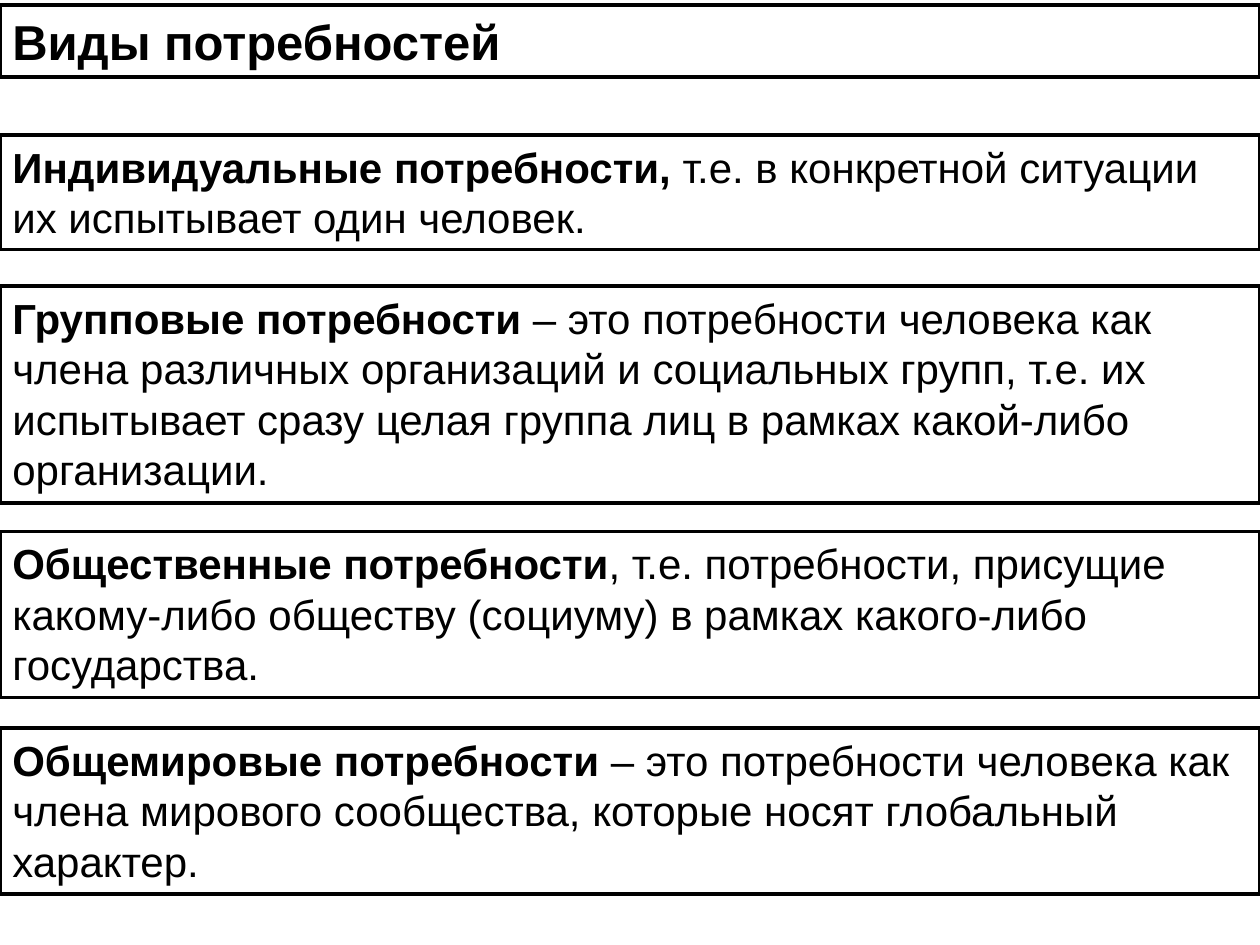
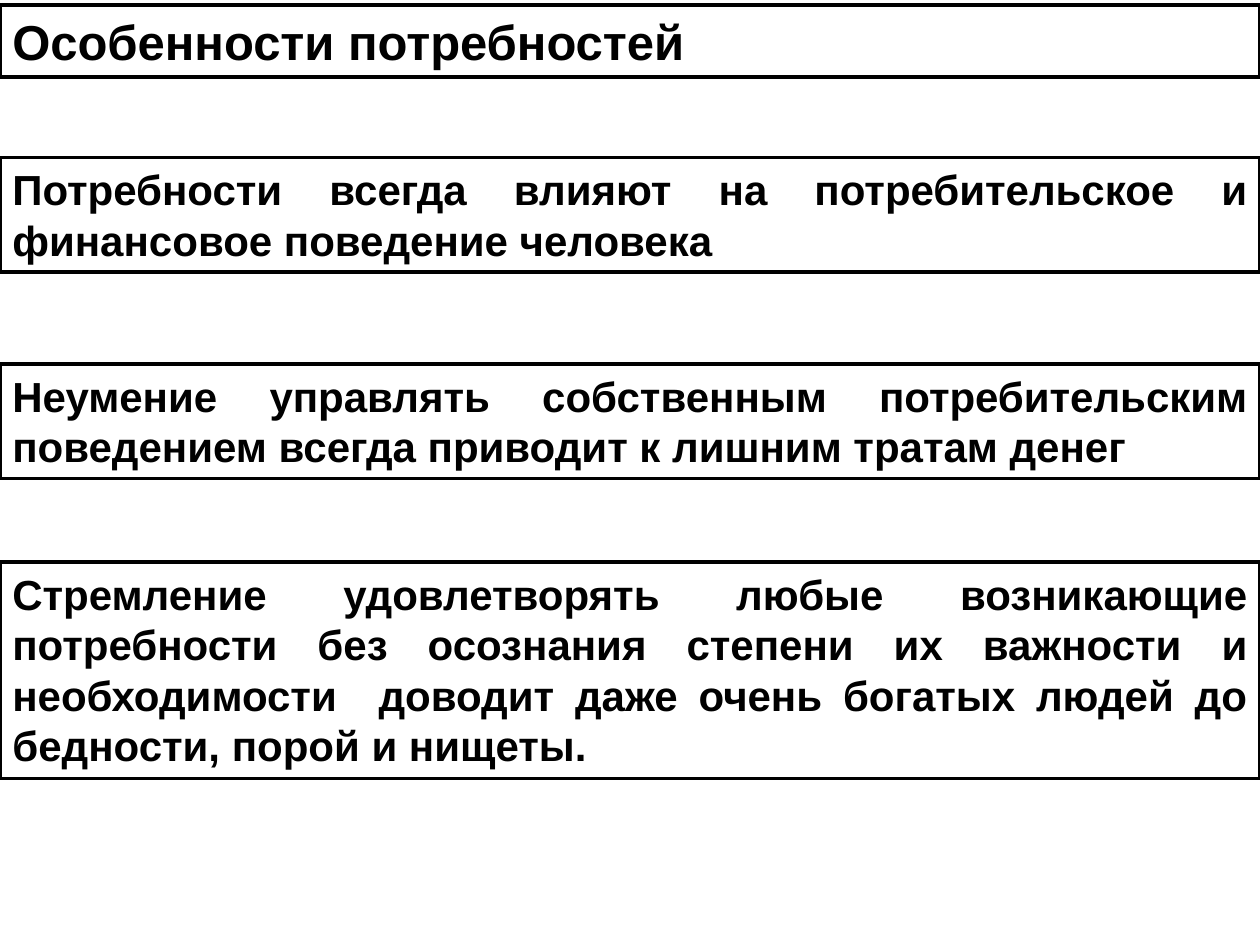
from dataclasses import dataclass

from pptx import Presentation
from pptx.dml.color import RGBColor
from pptx.enum.shapes import MSO_SHAPE
from pptx.enum.text import MSO_ANCHOR, MSO_AUTO_SIZE, PP_ALIGN
from pptx.presentation import Presentation as Prs
from pptx.slide import Slide
from pptx.util import Cm, Pt

COLORS = {"paper": "FFFFFF", "ink": "000000"}
WIDTH, HEIGHT = 25.4, 19.05
TITLE_TOP, TITLE_HEIGHT = 0.1, 1.45
LINE_HEIGHT, PADDING = 1.03, 0.25
FRAME_FORMAT = {
    "word_wrap": True,
    "auto_size": MSO_AUTO_SIZE.SHAPE_TO_FIT_TEXT,
    "vertical_anchor": MSO_ANCHOR.TOP,
}


@dataclass(frozen=True)
class Statement:
    top: float
    lines: int
    term: str
    explanation: str = ""

    @property
    def height(self) -> float:
        return self.lines * LINE_HEIGHT + PADDING


@dataclass(frozen=True)
class Topic:
    title: str
    align: PP_ALIGN
    statements: tuple[Statement, ...]


TOPICS = (
    Topic("Виды потребностей", PP_ALIGN.LEFT, (
        Statement(2.72, 2, "Индивидуальные потребности,",
                  " т.е. в конкретной ситуации их испытывает один человек."),
        Statement(5.77, 4, "Групповые потребности ",
                  "– это потребности человека как члена различных организаций "
                  "и социальных групп, т.е. их испытывает сразу целая группа лиц "
                  "в рамках какой-либо организации."),
        Statement(10.72, 3, "Общественные потребности",
                  ", т.е. потребности, присущие какому-либо обществу (социуму) "
                  "в рамках какого-либо государства."),
        Statement(14.68, 3, "Общемировые потребности ",
                  "– это потребности человека как члена мирового сообщества, "
                  "которые носят глобальный характер."),
    )),
    Topic("Особенности потребностей", PP_ALIGN.JUSTIFY, (
        Statement(3.18, 2, "Потребности всегда влияют на потребительское "
                           "и финансовое поведение человека"),
        Statement(7.34, 2, "Неумение управлять собственным потребительским "
                           "поведением всегда приводит к лишним тратам денег"),
        Statement(11.33, 4, "Стремление удовлетворять любые возникающие потребности "
                            "без осознания степени их важности и необходимости  доводит "
                            "даже очень богатых людей до бедности, порой и нищеты."),
    )),
)


def color(name: str) -> RGBColor:
    return RGBColor.from_string(COLORS[name])


def add_box(s: Slide, top: float, height: float, term: str,
            explanation: str = "", size: int = 24,
            align: PP_ALIGN = PP_ALIGN.LEFT) -> None:
    sp = s.shapes.add_shape(MSO_SHAPE.RECTANGLE, Cm(0), Cm(top), Cm(WIDTH), Cm(height))
    sp.shadow.inherit = False
    sp.fill.solid()
    sp.fill.fore_color.rgb = color("paper")
    sp.line.color.rgb = color("ink")
    sp.line.width = Pt(2)
    tf = sp.text_frame
    for name, value in FRAME_FORMAT.items():
        setattr(tf, name, value)
    p = tf.paragraphs[0]
    p.alignment = align
    for text, bold in ((term, True), (explanation, False)):
        if text:
            r = p.add_run()
            r.text = text
            font_format = {"name": "Arial", "size": Pt(size), "bold": bold}
            for name, value in font_format.items():
                setattr(r.font, name, value)
            r.font.color.rgb = color("ink")


def add_topic(prs: Prs, topic: Topic) -> None:
    s = prs.slides.add_slide(prs.slide_layouts[6])
    add_box(s, TITLE_TOP, TITLE_HEIGHT, topic.title, size=28)
    for item in topic.statements:
        add_box(s, item.top, item.height, item.term, item.explanation, align=topic.align)


def main() -> None:
    prs = Presentation()
    prs.slide_width, prs.slide_height = Cm(WIDTH), Cm(HEIGHT)
    for topic in TOPICS:
        add_topic(prs, topic)
    prs.save("out.pptx")


if __name__ == "__main__":
    main()
